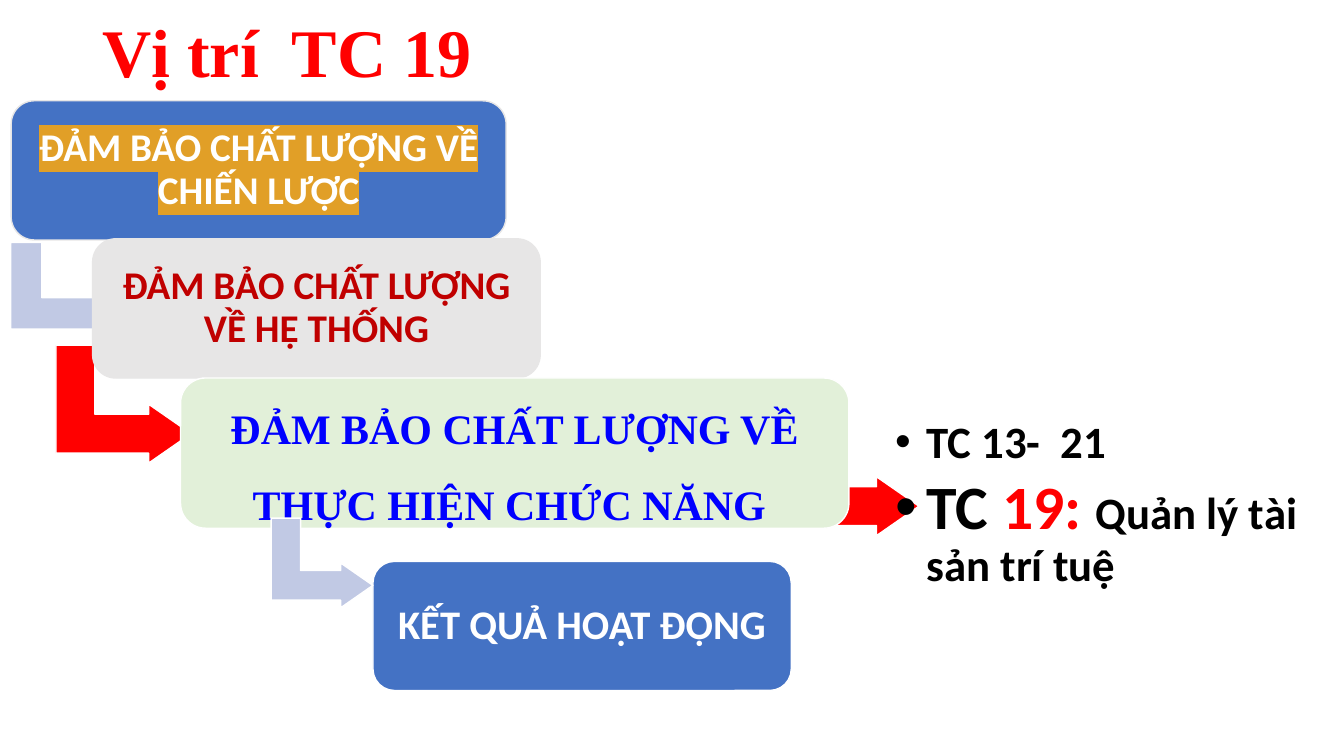
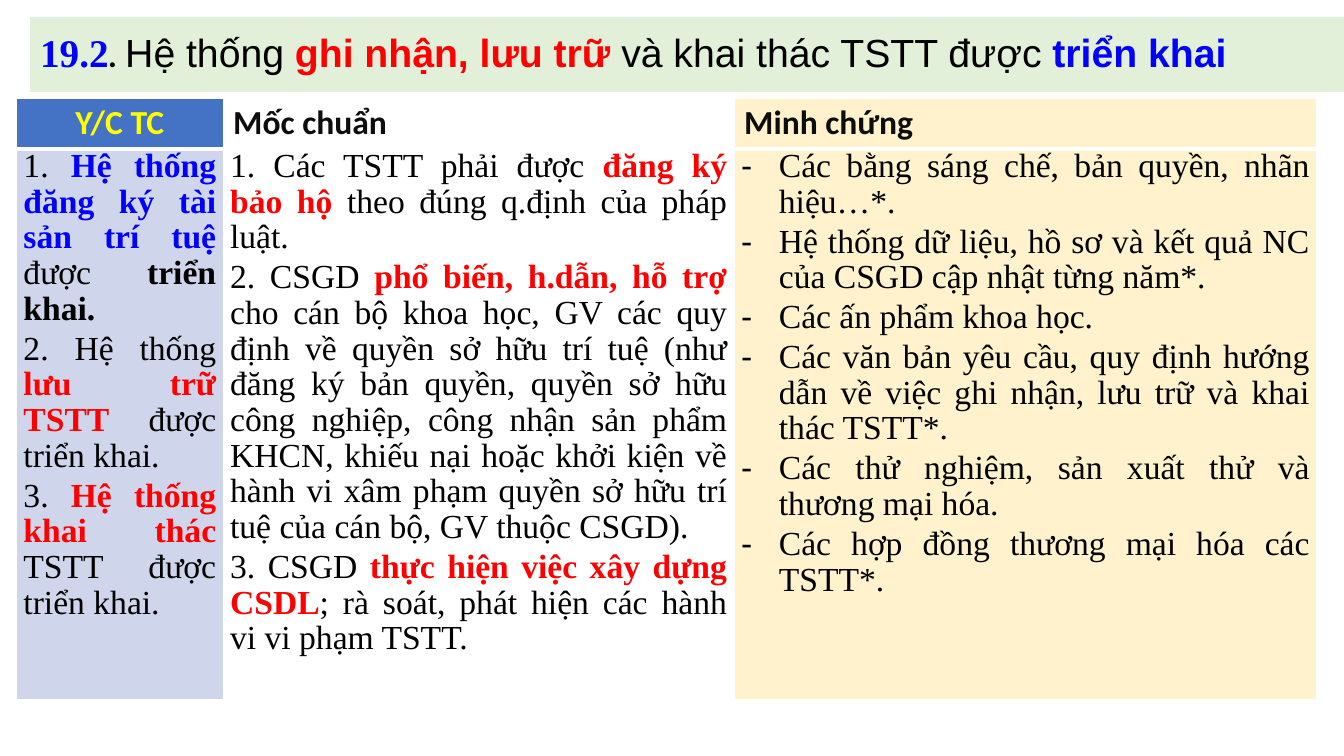
"""Build two slides on the place and the requirements of criterion 19."""
from lxml import etree
from pptx import Presentation
from pptx.dml.color import RGBColor
from pptx.enum import shapes, text
from pptx.oxml import ns
from pptx.util import Pt

COLORS = {
    "white": "FFFFFF", "black": "000000", "ink": "0D0D0D", "red": "FF0000",
    "dark_red": "C00000", "blue": "0000FF", "yellow": "FFFF00",
    "royal": "4472C4", "gray": "E7E6E6", "green": "E2F0D9",
    "lilac": "C1C9E4", "pale_lilac": "CFD5EA", "cream": "FFF2CC",
    "orange": "E19F27",
}
SERIF, SANS, ARIAL = "Times New Roman", "Calibri", "Arial"
MIDDLE = text.MSO_ANCHOR.MIDDLE
CENTER, JUSTIFY = text.PP_ALIGN.CENTER, text.PP_ALIGN.JUSTIFY


def rgb(name):
    return RGBColor.from_string(COLORS[name])


def add_xml(parent, tag, **attrs):
    return etree.SubElement(parent, ns.qn(tag), attrs)


def set_font(font, size=None, name=None, color=None, bold=None, italic=None):
    if size:
        font.size = Pt(size)
    if name:
        font.name = name
    if color:
        font.color.rgb = rgb(color)
    if bold is not None:
        font.bold = bold
    if italic is not None:
        font.italic = italic


def highlight(run, color):
    mark = add_xml(run._r.get_or_add_rPr(), "a:highlight")
    add_xml(mark, "a:srgbClr", val=COLORS[color])


def set_bullet(p, char, indent):
    pPr = p._p.get_or_add_pPr()
    pPr.set("marL", str(Pt(indent)))
    pPr.set("indent", str(-Pt(indent)))
    add_xml(pPr, "a:buFont", typeface=ARIAL)
    add_xml(pPr, "a:buChar", char=char)


def write(tf, paragraphs, font, align=None, line=None, before=0, after=0,
          bullet=None, indent=0, mark=None):
    for i, parts in enumerate(paragraphs):
        p = tf.add_paragraph() if i else tf.paragraphs[0]
        p.alignment = align
        p.space_before, p.space_after = Pt(before), Pt(after)
        if line:
            p.line_spacing = line
        if bullet:
            set_bullet(p, bullet, indent)
        set_font(p.font, **font)
        for part in [parts] if isinstance(parts, str) else parts:
            content, style = (part, {}) if isinstance(part, str) else part
            r = p.add_run()
            r.text = content
            set_font(r.font, **style)
            if mark:
                highlight(r, mark)


def set_frame(tf, margin=None):
    tf.word_wrap = True
    tf.vertical_anchor = MIDDLE
    if margin is not None:
        tf.margin_left = tf.margin_right = Pt(margin)
        tf.margin_top = tf.margin_bottom = Pt(margin)


def add_shape(s, kind, box, fill, line=None):
    sp = s.shapes.add_shape(kind, *map(Pt, box))
    sp.shadow.inherit = False
    sp.fill.solid()
    sp.fill.fore_color.rgb = rgb(fill)
    if line:
        sp.line.color.rgb = rgb(line)
        sp.line.width = Pt(1)
    else:
        sp.line.fill.background()
    return sp


def add_title(s, box, parts, font, fill=None):
    if fill:
        sp = add_shape(s, shapes.MSO_SHAPE.RECTANGLE, box, fill)
    else:
        sp = s.shapes.add_textbox(*map(Pt, box))
    set_frame(sp.text_frame)
    write(sp.text_frame, [parts], font, text.PP_ALIGN.LEFT, line=0.9)


def add_arrow(s, box, fill):
    sp = add_shape(s, shapes.MSO_SHAPE.BENT_UP_ARROW, box, fill, "white")
    sp.rotation = 90
    for i, value in enumerate((0.33, 0.25, 0.36)):
        sp.adjustments[i] = value


def add_step(s, box, fill, label, color, size=28, name=SANS, line=0.9,
             border="white", mark=None):
    sp = add_shape(s, shapes.MSO_SHAPE.ROUNDED_RECTANGLE, box, fill, border)
    set_frame(sp.text_frame, 8.6)
    font = dict(size=size, name=name, color=color, bold=True)
    write(sp.text_frame, [label], font, CENTER, line, mark=mark)


def style_cell(cell, fill, bottom=1):
    tcPr = cell._tc.get_or_add_tcPr()
    for side, width in zip("LRTB", (1, 1, 1, bottom)):
        ln = add_xml(tcPr, f"a:ln{side}", w=str(Pt(width)))
        add_xml(add_xml(ln, "a:solidFill"), "a:srgbClr", val=COLORS["white"])
    cell.fill.solid()
    cell.fill.fore_color.rgb = rgb(fill)


def add_table(s, box, widths, heights, columns):
    tbl = s.shapes.add_table(2, len(columns), *map(Pt, box)).table
    tbl.first_row = tbl.horz_banding = False
    for row, height in zip(tbl.rows, heights):
        row.height = Pt(height)
    for i, (width, column) in enumerate(zip(widths, columns)):
        tbl.columns[i].width = Pt(width)
        head, body = tbl.cell(0, i), tbl.cell(1, i)
        style_cell(head, column["head_fill"], bottom=3)
        style_cell(body, column["fill"])
        write(head.text_frame, [column["head"]],
              dict(size=24, name=SANS, color=column["color"], bold=True),
              column.get("align"))
        body.margin_left = body.margin_right = Pt(5)
        body.margin_top = body.margin_bottom = Pt(0)
        write(body.text_frame, column["items"],
              dict(size=24, name=SERIF, color="black", bold=False),
              JUSTIFY, line=0.96, before=3,
              bullet=column.get("bullet"), indent=27)


def strong(content, color="red"):
    return content, dict(color=color, bold=True)


def build_position(s):
    add_title(s, (66, 10, 828, 59), "Vị trí  TC 19",
              dict(size=48.6, name=SERIF, color="red", bold=True))
    add_arrow(s, (32.4, 148.3, 67.7, 117.4), "lilac")
    add_step(s, (8, 72, 353.5, 99.4), "royal",
             "ĐẢM BẢO CHẤT LƯỢNG VỀ CHIẾN LƯỢC", "white",
             border="gray", mark="orange")
    add_arrow(s, (46.1, 240.5, 84.2, 96.5), "red")
    add_step(s, (66.2, 170.6, 319.7, 99.4), "gray",
             "ĐẢM BẢO CHẤT LƯỢNG VỀ HỆ THỐNG", "dark_red", border="gray")
    add_arrow(s, (566, 292.3, 84.2, 96.5), "red")
    add_step(s, (129, 270, 477.4, 107.3), "green",
             "ĐẢM BẢO CHẤT LƯỢNG VỀ THỰC HIỆN CHỨC NĂNG ", "blue",
             size=30, name=SERIF, line=1.5)
    tf = s.shapes.add_textbox(*map(Pt, (630, 293, 322.6, 136))).text_frame
    set_frame(tf, 9.4)
    write(tf, ["TC 13-  21",
               [("TC ", dict(size=44)), ("19: ", dict(size=44, color="red")),
                "Quản lý tài sản trí tuệ"]],
          dict(size=32, name=SANS, color="black", bold=True),
          line=0.9, after=6, bullet="•", indent=22.3)
    add_step(s, (266.4, 401, 298.8, 92.2), "royal", "KẾT QUẢ HOẠT ĐỘNG",
             "white", size=29)
    add_arrow(s, (198, 365.8, 64, 72.7), "lilac")


def build_requirements(s):
    add_title(s, (21.6, 12.3, 938.4, 53.3), [
        ("19.2", dict(name=SERIF, color="blue", bold=True)),
        (". ", dict(size=24, name=SANS, bold=True, italic=True)),
        "Hệ thống ", strong("ghi nhận, lưu trữ "),
        "và khai thác TSTT được ", strong("triển khai", "blue"),
    ], dict(size=28, name=ARIAL, color="black", bold=False), "green")
    requirements = [
        ["1. ", strong("Hệ thống đăng ký tài sản trí tuệ ", "blue"),
         "được ", strong("triển khai.", "black")],
        ["2. Hệ thống ", strong("lưu trữ TSTT "), "được triển khai."],
        ["3. ", strong("Hệ thống khai thác "), "TSTT được triển khai."],
    ]
    benchmarks = [
        ["1. Các TSTT phải được ", strong("đăng ký bảo hộ "),
         "theo đúng q.định của pháp luật."],
        ["2. CSGD ", strong("phổ biến, h.dẫn, hỗ trợ "),
         "cho cán bộ khoa học, GV các quy định về quyền sở hữu trí tuệ "
         "(như đăng ký bản quyền, quyền sở hữu công nghiệp, công nhận sản "
         "phẩm KHCN, khiếu nại hoặc khởi kiện về hành vi xâm phạm quyền sở "
         "hữu trí tuệ của cán bộ, GV thuộc CSGD)."],
        ["3. CSGD ", strong("thực hiện việc xây dựng CSDL"),
         "; rà soát, phát hiện các hành vi vi phạm TSTT."],
    ]
    evidence = [
        "Các bằng sáng chế, bản quyền, nhãn hiệu…*.",
        "Hệ thống dữ liệu, hồ sơ và kết quả NC của CSGD cập nhật từng năm*.",
        "Các ấn phẩm khoa học.",
        "Các văn bản yêu cầu, quy định hướng dẫn về việc ghi nhận, lưu trữ "
        "và khai thác TSTT*.",
        "Các thử nghiệm, sản xuất thử và thương mại hóa.",
        "Các hợp đồng thương mại hóa các TSTT*.",
    ]
    add_table(s, (11.8, 70, 928.8, 426.7), (147.6, 365, 416.2), (36.5, 390.2), [
        dict(head="Y/C TC", color="yellow", head_fill="royal", align=CENTER,
             fill="pale_lilac", items=requirements),
        dict(head="Mốc chuẩn", color="ink", head_fill="white",
             fill="white", items=benchmarks),
        dict(head="Minh chứng", color="ink", head_fill="cream",
             fill="cream", items=evidence, bullet="-"),
    ])


def main():
    prs = Presentation()
    prs.slide_width, prs.slide_height = Pt(960), Pt(540)
    for build in (build_position, build_requirements):
        build(prs.slides.add_slide(prs.slide_layouts[6]))
    prs.save("out.pptx")


if __name__ == "__main__":
    main()
